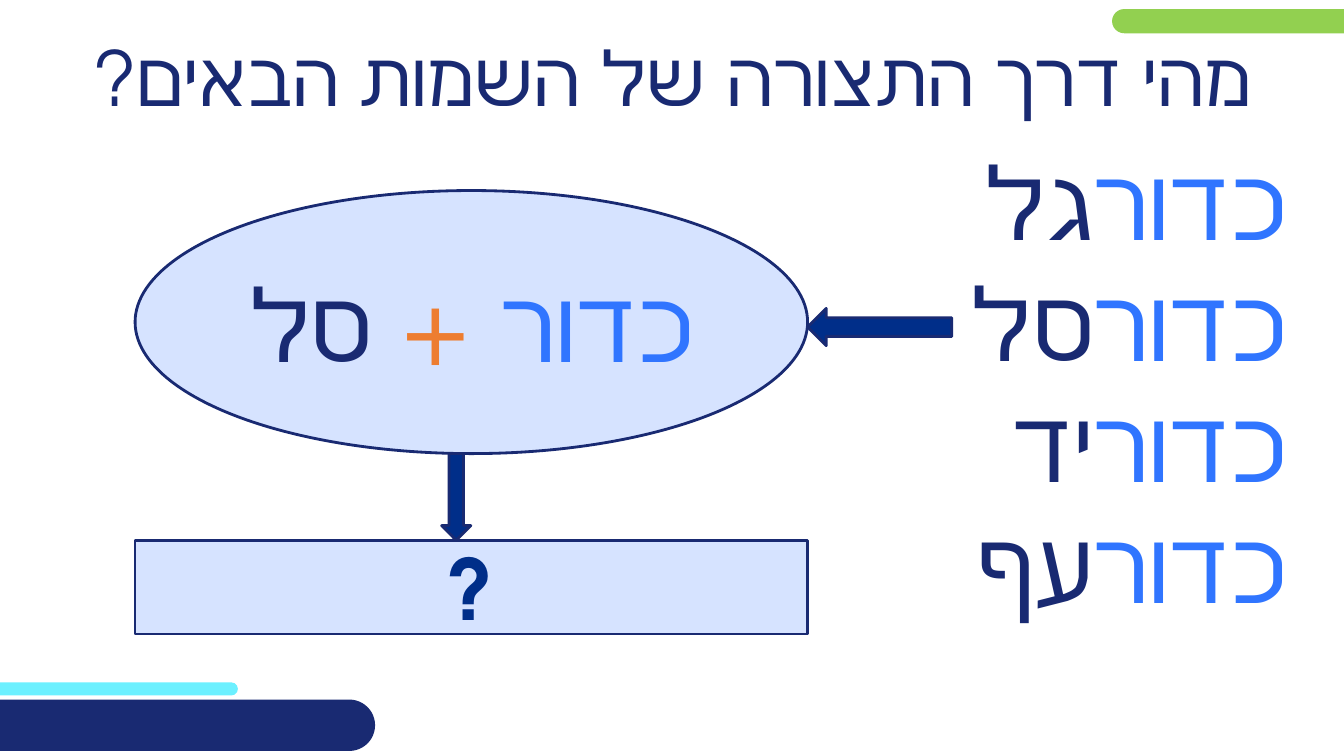
from lxml import etree
from pptx import Presentation
from pptx.dml.color import RGBColor
from pptx.enum.shapes import MSO_SHAPE
from pptx.enum.text import MSO_ANCHOR, MSO_AUTO_SIZE, PP_ALIGN
from pptx.oxml.ns import qn
from pptx.util import Inches, Pt

ROUNDED = MSO_SHAPE.ROUNDED_RECTANGLE
ELLIPSE = MSO_SHAPE.OVAL
RECTANGLE = MSO_SHAPE.RECTANGLE
LEFT_ARROW = MSO_SHAPE.LEFT_ARROW
DOWN_ARROW = MSO_SHAPE.DOWN_ARROW
MIDDLE = MSO_ANCHOR.MIDDLE
TOP = MSO_ANCHOR.TOP
NO_AUTOFIT = MSO_AUTO_SIZE.NONE
CENTER = PP_ALIGN.CENTER
RIGHT = PP_ALIGN.RIGHT

FONT = "TeX Gyre Adventor"
NAVY = RGBColor(0x19, 0x2A, 0x72)
DEEP_BLUE = RGBColor(0x00, 0x2E, 0x89)
BRIGHT_BLUE = RGBColor(0x30, 0x75, 0xFF)
PALE_BLUE = RGBColor(0xD6, 0xE3, 0xFF)
ORANGE = RGBColor(0xED, 0x7D, 0x31)
CYAN = RGBColor(0x6C, 0xF0, 0xFF)
GREEN = RGBColor(0x92, 0xD0, 0x50)

BALL = "כדור"
SECOND_PARTS = ["גל", "סל", "יד", "עף"]
BARS = [
    ((-1, 6.77, 3.36, 0.13), CYAN),
    ((11.03, 0.09, 5.8, 0.24), GREEN),
    ((-2.36, 6.94, 6.08, 0.51), NAVY),
]


def set_attributes(target, values):
    for name, value in values.items():
        setattr(target, name, value)


def place(shape, box):
    names = ("left", "top", "width", "height")
    set_attributes(shape, dict(zip(names, map(Inches, box))))


def add_run(paragraph, text, color, size, bold):
    run = paragraph.add_run()
    run.text = text
    set_attributes(run.font, {"name": FONT, "size": Pt(size), "bold": bold})
    run.font.color.rgb = color
    complex_font = etree.SubElement(run.font._element, qn("a:cs"))
    complex_font.set("typeface", FONT)


def write_lines(shape, lines, size, alignment=CENTER, anchor=MIDDLE, bold=False):
    """Write right-to-left paragraphs, each a list of (text, color) runs."""
    frame = shape.text_frame
    set_attributes(frame, {"word_wrap": True, "auto_size": NO_AUTOFIT,
                           "vertical_anchor": anchor})
    for index, runs in enumerate(lines):
        paragraph = frame.add_paragraph() if index else frame.paragraphs[0]
        set_attributes(paragraph, {"alignment": alignment, "line_spacing": 1.0,
                                   "space_before": Pt(0), "space_after": Pt(0)})
        properties = paragraph._p.get_or_add_pPr()
        for name, value in {"rtl": "1", "marL": "0", "indent": "0"}.items():
            properties.set(name, value)
        etree.SubElement(properties, qn("a:buNone"))
        for text, color in runs:
            add_run(paragraph, text, color, size, bold)


def add_filled_shape(slide, kind, box, fill, outline=None):
    shape = slide.shapes.add_shape(kind, *map(Inches, box))
    shape.shadow.inherit = False
    shape.fill.solid()
    shape.fill.fore_color.rgb = fill
    if outline is None:
        shape.line.fill.background()
    else:
        shape.line.color.rgb = outline
        shape.line.width = Pt(2)
    return shape


def add_bars(slide):
    for box, color in BARS:
        bar = add_filled_shape(slide, ROUNDED, box, color)
        bar.adjustments[0] = 0.5


def add_heading(slide):
    heading = slide.shapes.title
    place(heading, (0, 0.21, 13.33, 1.1))
    write_lines(heading, [[("מהי דרך התצורה של השמות הבאים?", NAVY)]], 54)


def add_word_list(slide):
    words = slide.placeholders[1]
    place(words, (8.52, 1.34, 4.33, 4.9))
    lines = [[(BALL, BRIGHT_BLUE), (part, NAVY)] for part in SECOND_PARTS]
    write_lines(words, lines, 72, RIGHT, TOP)


def add_diagram(slide):
    parts = add_filled_shape(slide, ELLIPSE, (1.34, 1.89, 6.67, 2.61), PALE_BLUE, NAVY)
    write_lines(parts, [[(BALL + " ", BRIGHT_BLUE), ("+ ", ORANGE), ("סל", NAVY)]], 72)
    add_filled_shape(slide, LEFT_ARROW, (8.01, 3.06, 1.43, 0.37), DEEP_BLUE, NAVY)
    add_filled_shape(slide, DOWN_ARROW, (4.38, 4.5, 0.29, 0.86), DEEP_BLUE, NAVY)
    answer = add_filled_shape(slide, RECTANGLE, (1.34, 5.36, 6.67, 0.93), PALE_BLUE, NAVY)
    write_lines(answer, [[("?", DEEP_BLUE)]], 60, bold=True)


def main():
    presentation = Presentation()
    presentation.slide_width = Inches(13.33)
    presentation.slide_height = Inches(7.5)
    slide = presentation.slides.add_slide(presentation.slide_layouts[1])
    add_bars(slide)
    add_heading(slide)
    add_word_list(slide)
    add_diagram(slide)
    presentation.save("out.pptx")


if __name__ == "__main__":
    main()
